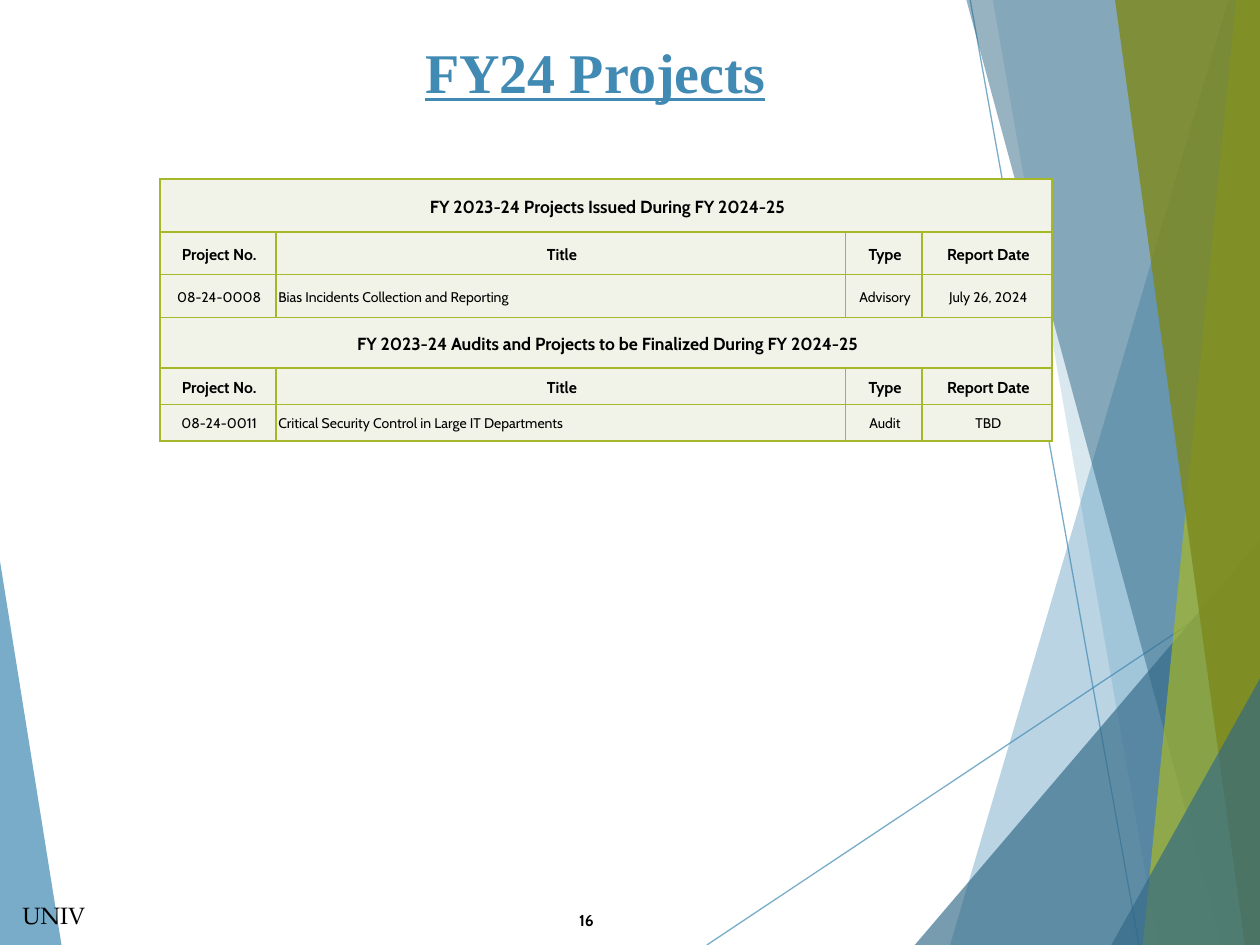
from dataclasses import dataclass

from lxml import etree
from pptx import Presentation
from pptx.dml.color import RGBColor
from pptx.enum.shapes import MSO_CONNECTOR
from pptx.enum.text import MSO_ANCHOR, PP_ALIGN
from pptx.oxml.ns import qn
from pptx.util import Inches, Pt

LEFT, CENTER, RIGHT = PP_ALIGN.LEFT, PP_ALIGN.CENTER, PP_ALIGN.RIGHT
MIDDLE, TOP = MSO_ANCHOR.MIDDLE, MSO_ANCHOR.TOP
STRAIGHT = MSO_CONNECTOR.STRAIGHT


@dataclass(frozen=True)
class Theme:
    blue: str = "418AB3"
    deep_blue: str = "316886"
    lime: str = "A6B727"
    olive: str = "7D891D"
    cell: str = "F1F3E8"
    ink: str = "000000"
    title_font: str = "Times New Roman"
    body_font: str = "Cabin"
    mark_font: str = "TeX Gyre Pagella"
    title: float = 32
    mark: float = 13.5
    band: float = 10
    head: float = 9
    body: float = 8


T = Theme()

# Backdrop: colour, opacity in percent, corner points in inches
LEFT_FACET = (T.blue, 70, [(-0.01, 4.39), (0.49, 7.51), (-0.01, 7.5)])
RIGHT_FACETS = [
    (T.blue, 36, [(9.75, 0), (7.54, 7.5), (10.02, 7.5), (10.01, 0)]),
    (T.blue, 20, [(7.88, 0), (9.19, 7.5), (10.01, 7.5), (10.01, 0)]),
    (T.deep_blue, 66, [(7.26, 7.5), (10, 4.29), (10.01, 7.5)]),
    (T.deep_blue, 50, [(7.67, 0), (9.7, 7.5), (10.01, 7.5), (10.01, 0)]),
    (T.lime, 70, [(9.81, 0), (9.07, 7.5), (10.01, 7.5), (10, 0)]),
    (T.olive, 82, [(8.85, 0), (9.88, 7.5), (10.02, 7.5), (10, 0)]),
    (T.deep_blue, 66, [(8.82, 7.5), (10.02, 5.35), (10.02, 7.5)]),
]
RAYS = [(5.61, 7.5, 10.01, 4.57), (7.7, 0, 9.04, 7.5)]

# Project table: one-item rows span all columns
COLUMNS = [0.92, 4.52, 0.61, 1.03]
ROW_HEIGHTS = [0.42, 0.34, 0.34, 0.4, 0.29, 0.29]
HEADINGS = ["Project No.", "Title", "Type", "Report Date"]
ROWS = [
    ["FY 2023-24 Projects Issued During FY 2024-25"],
    HEADINGS,
    ["08-24-0008", "Bias Incidents Collection and Reporting", "Advisory", "July 26, 2024"],
    ["FY 2023-24 Audits and Projects to be Finalized During FY 2024-25"],
    HEADINGS,
    ["08-24-0011", "Critical Security Control in Large IT Departments", "Audit", "TBD"],
]


def set_opacity(fill_parent, percent):
    color = fill_parent.find(qn("a:solidFill"))[0]
    etree.SubElement(color, qn("a:alpha"), val=str(percent * 1000))


def add_facet(slide, color, opacity, points):
    corners = [(Inches(x), Inches(y)) for x, y in points]
    builder = slide.shapes.build_freeform(*corners[0])
    builder.add_line_segments(corners[1:], close=True)
    sp = builder.convert_to_shape()
    sp.shadow.inherit = False
    sp.fill.solid()
    sp.fill.fore_color.rgb = RGBColor.from_string(color)
    set_opacity(sp._element.spPr, opacity)
    sp.line.fill.background()


def add_ray(slide, ends):
    line = slide.shapes.add_connector(STRAIGHT, *(Inches(v) for v in ends))
    line.line.color.rgb = RGBColor.from_string(T.blue)
    line.line.width = Pt(0.75)
    sp_pr = line._element.spPr
    set_opacity(sp_pr.find(qn("a:ln")), 70)
    etree.SubElement(sp_pr, qn("a:effectLst"))


def write(tf, text, size, font, color=T.ink, bold=False, align=LEFT):
    p = tf.paragraphs[0]
    p.alignment = align
    r = p.add_run()
    r.text = text
    r.font.size = Pt(size)
    r.font.name = font
    r.font.bold = bold
    r.font.color.rgb = RGBColor.from_string(color)
    return p, r


def add_title(slide, text):
    title = slide.shapes.title
    title.left, title.top = Inches(0.51), Inches(0.23)
    title.width, title.height = Inches(8.43), Inches(0.67)
    tf = title.text_frame
    tf.vertical_anchor = MIDDLE
    p, r = write(tf, text, T.title, T.title_font, T.blue, True, CENTER)
    r.font.underline = True


def add_label(slide, box, text, size, font, bold=False, align=LEFT, anchor=TOP, wrap=True):
    tf = slide.shapes.add_textbox(*(Inches(v) for v in box)).text_frame
    tf.word_wrap = wrap
    tf.vertical_anchor = anchor
    write(tf, text, size, font, bold=bold, align=align)


def style_cell(cell):
    cell.fill.solid()
    cell.fill.fore_color.rgb = RGBColor.from_string(T.cell)
    cell.vertical_anchor = MIDDLE
    cell.margin_left = Inches(0.02)
    cell.margin_right = cell.margin_top = cell.margin_bottom = 0
    tc_pr = cell._tc.get_or_add_tcPr()
    for i, side in enumerate(("a:lnL", "a:lnR", "a:lnT", "a:lnB")):
        ln = etree.Element(qn(side), w=str(Pt(1)))
        fill = etree.SubElement(ln, qn("a:solidFill"))
        etree.SubElement(fill, qn("a:srgbClr"), val=T.lime)
        tc_pr.insert(i, ln)


def add_project_table(slide):
    frame = slide.shapes.add_table(
        len(ROWS), len(COLUMNS), Inches(1.27), Inches(1.42),
        Inches(sum(COLUMNS)), Inches(sum(ROW_HEIGHTS)))
    table = frame.table
    table.first_row = table.horz_banding = False
    for column, width in zip(table.columns, COLUMNS):
        column.width = Inches(width)
    for row, height in zip(table.rows, ROW_HEIGHTS):
        row.height = Inches(height)
    for cell in table.iter_cells():
        style_cell(cell)

    last = len(COLUMNS) - 1
    for i, texts in enumerate(ROWS):
        is_band, is_head = len(texts) == 1, texts is HEADINGS
        if is_band:
            table.cell(i, 0).merge(table.cell(i, last))
        size = T.band if is_band else T.head if is_head else T.body
        bold = is_band or is_head
        for j, text in enumerate(texts):
            align = LEFT if j == 1 and not is_head else CENTER
            tf = table.cell(i, j).text_frame
            p, r = write(tf, text, size, T.body_font, bold=bold, align=align)
            p.line_spacing = 1.15


def main():
    prs = Presentation()
    prs.slide_width, prs.slide_height = Inches(10), Inches(7.5)
    slide = prs.slides.add_slide(prs.slide_layouts.get_by_name("Title Only"))

    # Backdrop
    add_facet(slide, *LEFT_FACET)
    for ends in RAYS:
        add_ray(slide, ends)
    for facet in RIGHT_FACETS:
        add_facet(slide, *facet)

    # Title, page number and organisation mark
    add_title(slide, "FY24 Projects")
    add_label(slide, (4.36, 7.1, 0.45, 0.4), "16", T.head, T.body_font,
              bold=True, align=RIGHT, anchor=MIDDLE)
    add_label(slide, (0.08, 7.1, 0.7, 0.33), "UNIV", T.mark, T.mark_font, wrap=False)

    # Project table
    add_project_table(slide)

    prs.save("out.pptx")


if __name__ == "__main__":
    main()
